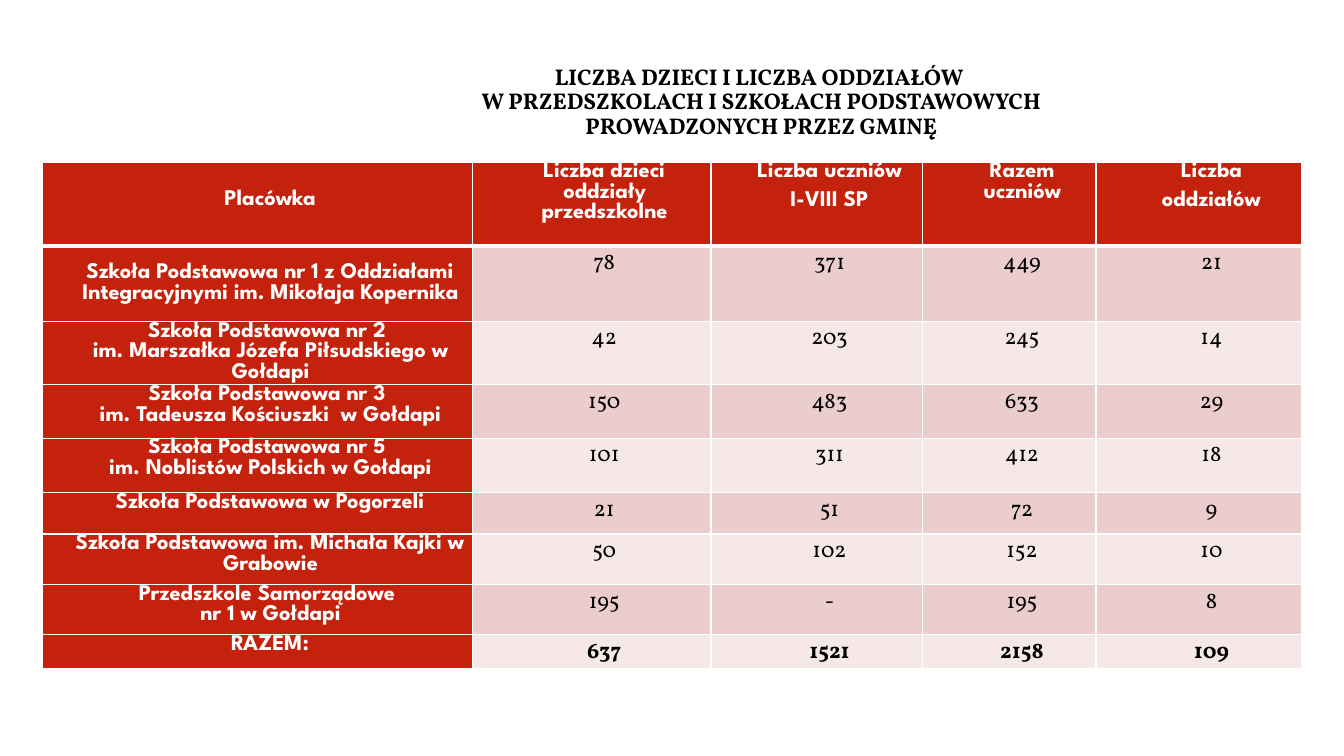
from copy import deepcopy
from dataclasses import dataclass

from lxml import etree
from pptx import Presentation
from pptx.dml.color import RGBColor
from pptx.enum.text import MSO_ANCHOR, MSO_AUTO_SIZE, PP_ALIGN
from pptx.oxml.ns import qn
from pptx.util import Emu, Inches, Pt

CENTER = PP_ALIGN.CENTER
TOP = MSO_ANCHOR.TOP
MIDDLE = MSO_ANCHOR.MIDDLE
NO_FIT = MSO_AUTO_SIZE.NONE

WIDE, HIGH = Inches(13.33), Inches(7.5)
RED, ROSE, BLUSH = "C4220D", "EACDCC", "F5E8E7"
WHITE, BLACK = "FFFFFF", "000000"
SANS, SERIF = "League Spartan", "Vollkorn"

COLS = [31.95, 17.78, 15.75, 12.9, 15.3]
ROWS = [11.07, 10, 8.4, 7.07, 7.2, 5.47, 6.67, 6.67, 4.4]

TITLE = (
    "LICZBA DZIECI I LICZBA ODDZIAŁÓW \v"
    "W PRZEDSZKOLACH I SZKOŁACH PODSTAWOWYCH PROWADZONYCH PRZEZ GMINĘ"
)
HEADS = [
    "Placówka",
    "Liczba dzieci oddziały przedszkolne",
    "Liczba uczniów\nI-VIII SP",
    "Razem uczniów",
    "Liczba\noddziałów",
]


@dataclass
class School:
    name: str
    counts: list[str]
    after: float = 8
    anchor: MSO_ANCHOR = TOP
    bold: bool = False


SCHOOLS = [
    School("Szkoła Podstawowa nr 1 z Oddziałami Integracyjnymi im. Mikołaja Kopernika",
           ["78", "371", "449", "21"], 0.2, MIDDLE),
    School("Szkoła Podstawowa nr 2 \vim. Marszałka Józefa Piłsudskiego w Gołdapi",
           ["42", "203", "245", "14"]),
    School("Szkoła Podstawowa nr 3 \vim. Tadeusza Kościuszki  w Gołdapi",
           ["150", "483", "633", "29"]),
    School("Szkoła Podstawowa nr 5 \vim. Noblistów Polskich w Gołdapi",
           ["101", "311", "412", "18"]),
    School("Szkoła Podstawowa w Pogorzeli", ["21", "51", "72", "9"]),
    School("Szkoła Podstawowa im. Michała Kajki w Grabowie",
           ["50", "102", "152", "10"]),
    School("Przedszkole Samorządowe \vnr 1 w Gołdapi", ["195", "-", "195", "8"]),
    School("RAZEM:", ["637", "1521", "2158", "109"], bold=True),
]


@dataclass
class Style:
    fill: str
    font: str = SANS
    color: str = WHITE
    bold: bool = True
    after: float = 5.8
    lines: float = 1.0
    anchor: MSO_ANCHOR = TOP
    top: float = 0
    under: float = 1
    over: float = 1


def across(share: float) -> Emu:
    return Emu(round(WIDE * share / 100))


def down(share: float) -> Emu:
    return Emu(round(HIGH * share / 100))


def paint(color: str) -> RGBColor:
    return RGBColor.from_string(color)


def apply(item: object, values: dict) -> None:
    for key, value in values.items():
        setattr(item, key, value)


def format_text(para, color: str, para_values: dict, font_values: dict) -> None:
    apply(para, para_values)
    for run in para.runs:
        apply(run.font, font_values)
        run.font.color.rgb = paint(color)
    for gap in para._p.findall(qn("a:br")):
        gap.insert(0, deepcopy(para.runs[0]._r.rPr))


def add_border(cell, style: Style) -> None:
    props = cell._tc.get_or_add_tcPr()
    sides = {"lnL": 1, "lnR": 1, "lnT": style.over, "lnB": style.under}
    for spot, (side, width) in enumerate(sides.items()):
        line = etree.Element(qn(f"a:{side}"), w=str(Pt(width)))
        solid = etree.SubElement(line, qn("a:solidFill"))
        etree.SubElement(solid, qn("a:srgbClr"), val=WHITE)
        props.insert(spot, line)


def fill_cell(cell, text: str, style: Style) -> None:
    apply(cell, {
        "margin_left": Inches(0.07), "margin_right": Inches(0.07),
        "margin_top": down(style.top), "margin_bottom": 0,
        "vertical_anchor": style.anchor,
    })
    cell.fill.solid()
    cell.fill.fore_color.rgb = paint(style.fill)
    add_border(cell, style)
    cell.text_frame.text = text
    for para in cell.text_frame.paragraphs:
        props = para._p.get_or_add_pPr()
        props.set("marL", str(Inches(0.26)))
        props.set("indent", str(Inches(-0.01)))
        format_text(
            para, style.color,
            {"alignment": CENTER, "line_spacing": style.lines,
             "space_before": Pt(0), "space_after": Pt(style.after)},
            {"name": style.font, "size": Pt(16), "bold": style.bold},
        )


def add_title(slide) -> None:
    title = slide.shapes.title
    apply(title, {"left": across(32.63), "top": down(5.73),
                  "width": across(48), "height": down(15.6)})
    frame = title.text_frame
    frame.text = TITLE
    apply(frame, {"word_wrap": True, "auto_size": NO_FIT, "vertical_anchor": MIDDLE})
    format_text(
        frame.paragraphs[0], BLACK,
        {"alignment": CENTER, "line_spacing": 0.9, "space_before": Pt(0)},
        {"name": SERIF, "size": Pt(16.2), "bold": True},
    )


def add_grid(slide) -> None:
    grid = slide.shapes.add_table(
        len(ROWS), len(COLS), across(3.18), down(21.45),
        across(sum(COLS)), down(sum(ROWS)),
    ).table
    apply(grid, {"first_col": True, "horz_banding": False})
    for col, share in zip(grid.columns, COLS):
        col.width = across(share)
    for row, share in zip(grid.rows, ROWS):
        row.height = down(share)
    for col, head in enumerate(HEADS):
        fill_cell(grid.cell(0, col), head,
                  Style(RED, top=0 if col else 3.7, under=3))
    for row, school in enumerate(SCHOOLS, 1):
        over = 3 if row == 1 else 1
        fill_cell(grid.cell(row, 0), school.name,
                  Style(RED, after=school.after, anchor=school.anchor, over=over))
        band = ROSE if row % 2 else BLUSH
        for col, count in enumerate(school.counts, 1):
            fill_cell(grid.cell(row, col), count,
                      Style(band, SERIF, BLACK, school.bold, lines=1.07, over=over))


def main() -> None:
    deck = Presentation()
    apply(deck, {"slide_width": WIDE, "slide_height": HIGH})
    slide = deck.slides.add_slide(deck.slide_layouts[5])
    add_title(slide)
    add_grid(slide)
    deck.save("out.pptx")


if __name__ == "__main__":
    main()
